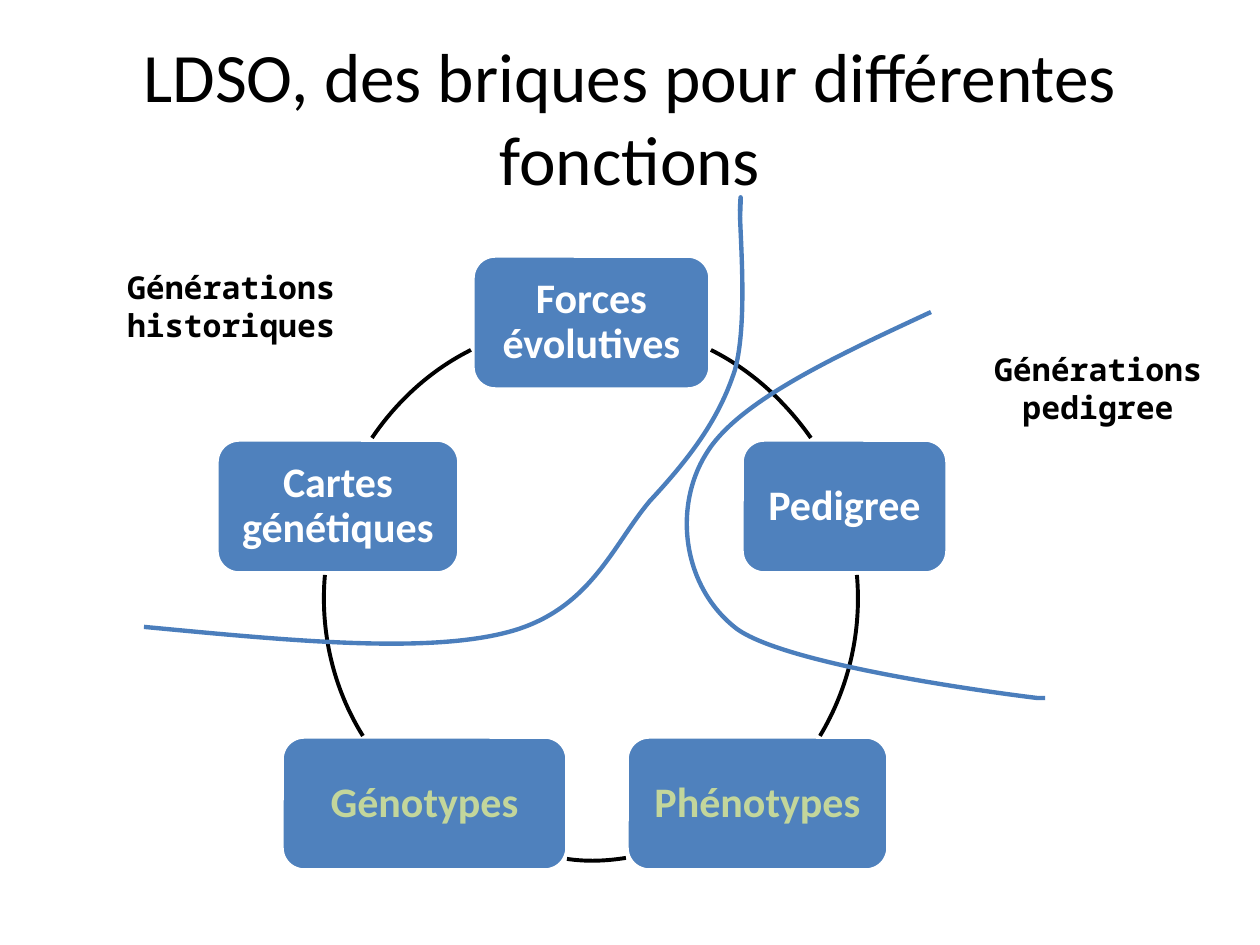
from lxml import etree
from pptx import Presentation
from pptx.dml.color import RGBColor
from pptx.enum.shapes import MSO_SHAPE
from pptx.enum.text import MSO_ANCHOR, MSO_AUTO_SIZE, PP_ALIGN
from pptx.oxml.ns import qn
from pptx.util import Inches, Pt

ROUNDED = MSO_SHAPE.ROUNDED_RECTANGLE
MIDDLE = MSO_ANCHOR.MIDDLE
NO_AUTOFIT = MSO_AUTO_SIZE.NONE
CENTER = PP_ALIGN.CENTER
PX = Inches(1) / 126
COLORS = {"black": "000000", "white": "FFFFFF", "box": "4F81BD",
          "green": "C3D69B", "curve": "4B7EBC"}


def format_paragraph(paragraph, font_name, size, color, bold):
    paragraph.alignment = CENTER
    paragraph.font.name = font_name
    paragraph.font.size = Pt(size)
    paragraph.font.bold = bold
    paragraph.font.color.rgb = RGBColor.from_string(COLORS[color])


def add_curve(slide, points, color, width):
    """Draw Bézier segments: a start point, then three points per segment."""
    builder = slide.shapes.build_freeform(*points[0], scale=PX)
    builder.add_line_segments(points[1:], close=False)
    shape = builder.convert_to_shape()
    lines = list(shape._element.iter(qn("a:lnTo")))
    for first in range(0, len(lines), 3):
        segment = etree.Element(qn("a:cubicBezTo"))
        lines[first].addprevious(segment)
        for line in lines[first:first + 3]:
            segment.append(line[0])
            line.getparent().remove(line)
    shape.fill.background()
    shape.line.color.rgb = RGBColor.from_string(COLORS[color])
    shape.line.width = Pt(width)
    shape.shadow.inherit = False
    return shape


presentation = Presentation()
presentation.slide_width = Inches(10)
presentation.slide_height = Inches(7.5)
slide = presentation.slides.add_slide(presentation.slide_layouts[5])

title = slide.shapes.title
title.left, title.top, title.width, title.height = [
    round(value * PX) for value in (63, 37, 1134, 158)]
title.text_frame.text = "LDSO, des briques pour différentes fonctions"
title.text_frame.auto_size = NO_AUTOFIT
title.text_frame.vertical_anchor = MIDDLE
format_paragraph(title.text_frame.paragraphs[0], "Calibri", 39.6, "black", False)

# Cycle: boxes of one height, joined by arcs
BOX_HEIGHT = 133
boxes = [
    ("Forces évolutives", 473, 256, 237, "white"),
    ("Pedigree", 742, 440, 205, "white"),
    ("Phénotypes", 627, 737, 261, "green"),
    ("Génotypes", 282, 737, 285, "green"),
    ("Cartes génétiques", 217, 440, 242, "white"),
]
for text, left, top, width, text_color in boxes:
    box = slide.shapes.add_shape(
        ROUNDED, *[round(value * PX) for value in (left, top, width, BOX_HEIGHT)])
    box.shadow.inherit = False
    box.fill.solid()
    box.fill.fore_color.rgb = RGBColor.from_string(COLORS["box"])
    box.line.color.rgb = RGBColor.from_string(COLORS["white"])
    box.line.width = Pt(2)
    frame = box.text_frame
    frame.text = text
    frame.word_wrap = True
    frame.vertical_anchor = MIDDLE
    frame.margin_left = frame.margin_right = round(13 * PX)
    frame.margin_top = frame.margin_bottom = round(13 * PX)
    frame.paragraphs[0].line_spacing = 0.9
    format_paragraph(frame.paragraphs[0], "Calibri", 24, text_color, True)

# Each arc sits in the square frame of its full circle
CIRCLE_SIZE = 532
cycle_arcs = [
    (325, 323, [(711, 350), (751, 370), (785, 401), (811, 438)]),
    (326, 333, [(857, 575), (862, 631), (849, 688), (820, 736)]),
    (325, 329, [(626, 858), (607, 861), (587, 862), (567, 859)]),
    (324, 333, [(363, 736), (333, 688), (320, 631), (325, 575)]),
    (325, 323, [(372, 438), (397, 401), (431, 370), (471, 350)]),
]
for left, top, points in cycle_arcs:
    arc = add_curve(slide, points, "black", 2.25)
    arc.left, arc.top = round(left * PX), round(top * PX)
    arc.width = arc.height = round(CIRCLE_SIZE * PX)
    outline = next(arc._element.iter(qn("a:path")))
    outline.set("w", str(CIRCLE_SIZE))
    outline.set("h", str(CIRCLE_SIZE))
    for node, (x, y) in zip(outline.iter(qn("a:pt")), points):
        node.set("x", str(x - left))
        node.set("y", str(y - top))

# Borders between the two kinds of generations
pedigree_border = [
    (931, 312), (834, 357), (737, 402), (706, 454),
    (673, 507), (682, 587), (737, 629),
    (793, 669), (1037, 698), (1037, 698),
    (1040, 698), (1042, 698), (1045, 698),
]
historical_border = [
    (144, 627), (282, 640), (421, 654), (505, 633),
    (590, 612), (612, 546), (650, 501),
    (689, 459), (719, 420), (735, 370),
    (748, 323), (740, 236), (740, 210),
    (741, 185), (741, 202), (740, 219),
]
for border in (pedigree_border, historical_border):
    add_curve(slide, border, "curve", 2.5)

labels = [("Générations\npedigree", 981, 344), ("Générations\nhistoriques", 114, 262)]
for text, left, top in labels:
    label = slide.shapes.add_textbox(
        *[round(value * PX) for value in (left, top, 234, 83)])
    label.text_frame.text = text
    label.text_frame.word_wrap = False
    for paragraph in label.text_frame.paragraphs:
        format_paragraph(paragraph, "Noto Sans Mono", 18, "black", True)

presentation.save("out.pptx")
